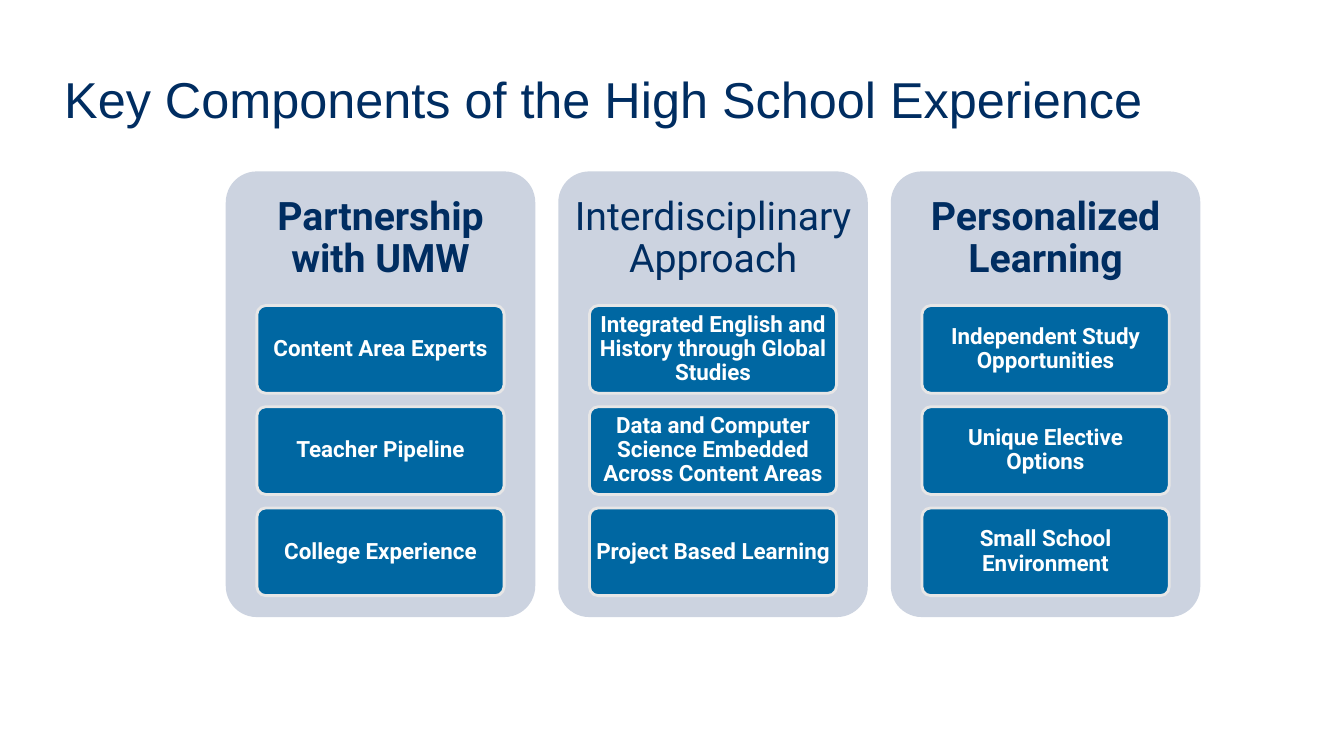
from dataclasses import dataclass

from pptx import Presentation
from pptx.dml.color import RGBColor
from pptx.enum.shapes import MSO_SHAPE as Shape
from pptx.enum.text import MSO_ANCHOR as Anchor, PP_ALIGN as Align
from pptx.util import Cm, Pt


@dataclass(frozen=True)
class Theme:
    navy: RGBColor = RGBColor.from_string("002D61")
    blue: RGBColor = RGBColor.from_string("0067A2")
    panel: RGBColor = RGBColor.from_string("CCD3E0")
    edge: RGBColor = RGBColor.from_string("E7E6E6")
    white: RGBColor = RGBColor.from_string("FFFFFF")
    title_font: str = "Arial"
    body_font: str = "Roboto"
    title_size: int = 36
    heading_size: int = 28
    card_size: int = 16


THEME = Theme()

COLUMNS = [
    ("Partnership with UMW", True,
     ["Content Area Experts", "Teacher Pipeline", "College Experience"]),
    ("Interdisciplinary Approach", False,
     ["Integrated English and History through Global Studies",
      "Data and Computer Science Embedded Across Content Areas",
      "Project Based Learning"]),
    ("Personalized Learning", True,
     ["Independent Study Opportunities", "Unique Elective Options",
      "Small School Environment"]),
]

COLUMN_LEFT, COLUMN_TOP, COLUMN_STEP = 5.69, 4.32, 8.38
COLUMN_WIDTH, COLUMN_HEIGHT, HEADING_HEIGHT = 7.8, 11.23, 3.38
CARD_TOP, CARD_STEP, CARD_WIDTH, CARD_HEIGHT = 7.7, 2.55, 6.23, 2.21
CARD_INDENT = (COLUMN_WIDTH - CARD_WIDTH) / 2


def write_text(shape, text, font, size, color, bold=False,
               align=Align.CENTER, spacing=0.9, inset=(0.25, 0.13)):
    frame = shape.text_frame
    frame.word_wrap = True
    frame.vertical_anchor = Anchor.MIDDLE
    frame.margin_left = frame.margin_right = Cm(inset[0])
    frame.margin_top = frame.margin_bottom = Cm(inset[1])
    para = frame.paragraphs[0]
    para.text = text
    para.alignment = align
    para.line_spacing = spacing
    para.font.name = font
    para.font.size = Pt(size)
    para.font.bold = bold
    para.font.color.rgb = color


def add_text(page, left, top, width, height, text, *style, **options):
    box = page.shapes.add_textbox(Cm(left), Cm(top), Cm(width), Cm(height))
    write_text(box, text, *style, **options)


def add_rounded(page, left, top, width, height, fill, edge=None):
    box = page.shapes.add_shape(
        Shape.ROUNDED_RECTANGLE, Cm(left), Cm(top), Cm(width), Cm(height))
    box.adjustments[0] = 0.1
    box.shadow.inherit = False
    box.fill.solid()
    box.fill.fore_color.rgb = fill
    if edge is None:
        box.line.fill.background()
    else:
        box.line.color.rgb = edge
        box.line.width = Pt(2)
    return box


def add_column(page, left, heading, bold, cards):
    add_rounded(page, left, COLUMN_TOP, COLUMN_WIDTH, COLUMN_HEIGHT, THEME.panel)
    add_text(page, left, COLUMN_TOP, COLUMN_WIDTH, HEADING_HEIGHT, heading,
             THEME.body_font, THEME.heading_size, THEME.navy, bold,
             inset=(0.3, 0.3))
    for row, text in enumerate(cards):
        card = add_rounded(page, left + CARD_INDENT, CARD_TOP + row * CARD_STEP,
                           CARD_WIDTH, CARD_HEIGHT, THEME.blue, THEME.edge)
        write_text(card, text, THEME.body_font, THEME.card_size, THEME.white,
                   bold=True, inset=(0.1, 0.08))


def main():
    deck = Presentation()
    deck.slide_width, deck.slide_height = Cm(33.87), Cm(19.05)
    page = deck.slides.add_slide(deck.slide_layouts[6])
    add_text(page, 1.37, 0.64, 29.21, 3.68,
             "Key Components of the High School Experience",
             THEME.title_font, THEME.title_size, THEME.navy,
             align=Align.LEFT, spacing=1.0)
    for index, (heading, bold, cards) in enumerate(COLUMNS):
        add_column(page, COLUMN_LEFT + index * COLUMN_STEP, heading, bold, cards)
    deck.save("out.pptx")


if __name__ == "__main__":
    main()
